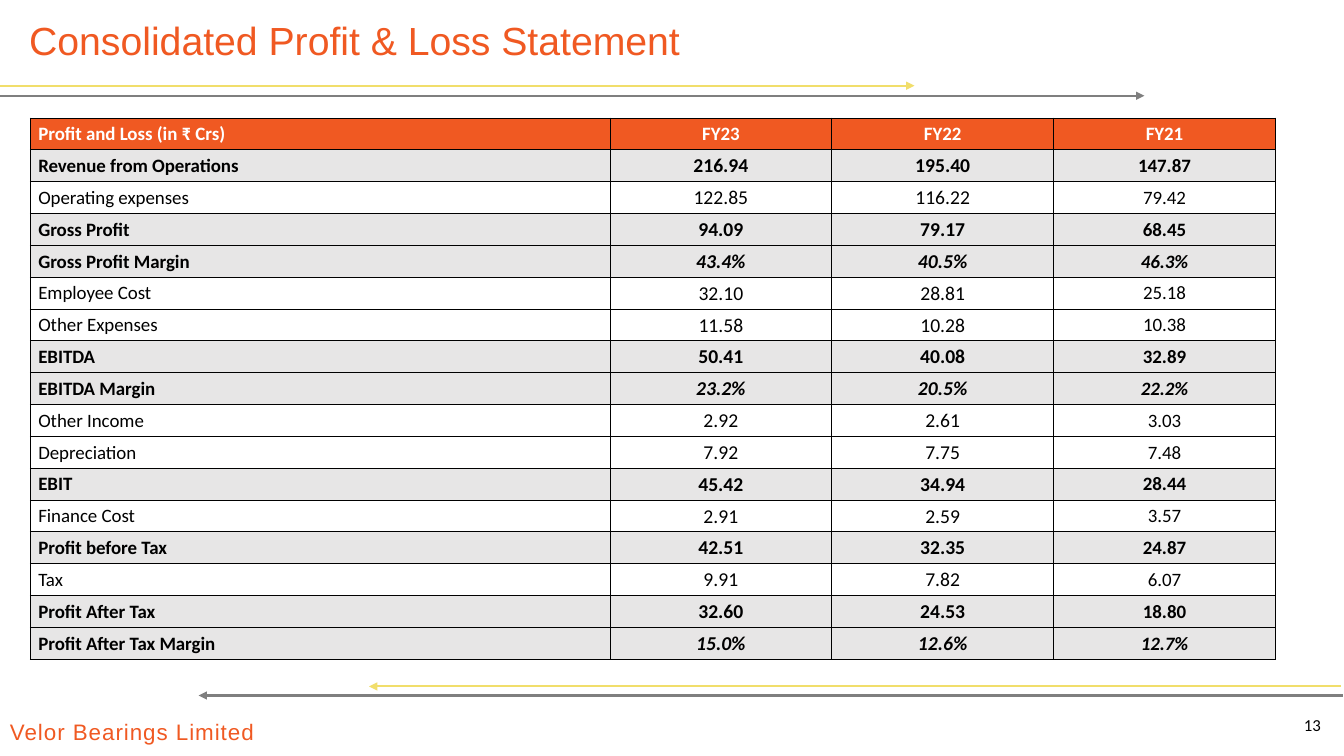
from lxml import etree
from pptx import Presentation
from pptx.dml.color import RGBColor
from pptx.enum.shapes import MSO_CONNECTOR
from pptx.enum.text import MSO_ANCHOR, PP_ALIGN
from pptx.oxml.ns import qn
from pptx.util import Inches, Pt

STRAIGHT = MSO_CONNECTOR.STRAIGHT
TOP, MIDDLE = MSO_ANCHOR.TOP, MSO_ANCHOR.MIDDLE
LEFT, CENTER, RIGHT = PP_ALIGN.LEFT, PP_ALIGN.CENTER, PP_ALIGN.RIGHT

ORANGE = RGBColor(0xF0, 0x59, 0x22)
YELLOW = RGBColor(0xF1, 0xDE, 0x6B)
GREY = RGBColor(0x7F, 0x7F, 0x7F)
PALE = RGBColor(0xE7, 0xE6, 0xE6)
BLACK = RGBColor(0, 0, 0)
WHITE = RGBColor(0xFF, 0xFF, 0xFF)

ARROWS = [
    (13.32, 1.97, 6.9, GREY),
    (13.3, 3.66, 6.81, YELLOW),
    (0, 9.07, 0.85, YELLOW),
    (0, 11.35, 0.95, GREY),
]
WIDTHS = [5.75, 2.2, 2.2, 2.2]
HEADER = ("Profit and Loss (in ₹ Crs)", "FY23", "FY22", "FY21")
RESULTS = [
    ("Revenue from Operations", "216.94", "195.40", "147.87"),
    ("Operating expenses", "122.85", "116.22", "79.42"),
    ("Gross Profit", "94.09", "79.17", "68.45"),
    ("Gross Profit Margin", "43.4%", "40.5%", "46.3%"),
    ("Employee Cost", "32.10", "28.81", "25.18"),
    ("Other Expenses", "11.58", "10.28", "10.38"),
    ("EBITDA", "50.41", "40.08", "32.89"),
    ("EBITDA Margin", "23.2%", "20.5%", "22.2%"),
    ("Other Income", "2.92", "2.61", "3.03"),
    ("Depreciation", "7.92", "7.75", "7.48"),
    ("EBIT", "45.42", "34.94", "28.44"),
    ("Finance Cost", "2.91", "2.59", "3.57"),
    ("Profit before Tax", "42.51", "32.35", "24.87"),
    ("Tax", "9.91", "7.82", "6.07"),
    ("Profit After Tax", "32.60", "24.53", "18.80"),
    ("Profit After Tax Margin", "15.0%", "12.6%", "12.7%"),
]
PLAIN = {"Operating expenses", "Employee Cost", "Other Expenses",
         "Other Income", "Depreciation", "Finance Cost", "Tax"}


def style(run, size, color, face, bold=False, italic=False):
    font = run.font
    font.size, font.name = Pt(size), face
    font.bold, font.italic = bold, italic
    font.color.rgb = color


def add_text(slide, box, text, size, color, face, align=LEFT, anchor=MIDDLE):
    frame = slide.shapes.add_textbox(*map(Inches, box)).text_frame
    frame.word_wrap = True
    frame.vertical_anchor = anchor
    frame.text = text
    line = frame.paragraphs[0]
    line.alignment = align
    style(line.runs[0], size, color, face)
    return line


def add_arrow(slide, start, end, top, color):
    arrow = slide.shapes.add_connector(
        STRAIGHT, Inches(start), Inches(top), Inches(end), Inches(top))
    arrow.line.color.rgb = color
    arrow.line.width = Pt(1.5)
    etree.SubElement(arrow.line._get_or_add_ln(), qn("a:tailEnd"), type="triangle")
    etree.SubElement(arrow._element.spPr, qn("a:effectLst"))


def add_border(cell):
    props = cell._tc.get_or_add_tcPr()
    for side in ("a:lnL", "a:lnR", "a:lnT", "a:lnB"):
        line = etree.SubElement(props, qn(side), w=str(Pt(0.5)))
        fill = etree.SubElement(line, qn("a:solidFill"))
        etree.SubElement(fill, qn("a:srgbClr"), val=str(BLACK))


def fill_cell(cell, text, first, fill, size, color, bold, italic):
    cell.margin_left = Inches(0.08 if first else 0.01)
    cell.margin_right = cell.margin_top = Inches(0.01)
    cell.margin_bottom = 0
    cell.vertical_anchor = MIDDLE
    add_border(cell)
    if fill is None:
        cell.fill.background()
    else:
        cell.fill.solid()
        cell.fill.fore_color.rgb = fill
    cell.text = text
    line = cell.text_frame.paragraphs[0]
    line.alignment = LEFT if first else CENTER
    style(line.runs[0], size, color, "Calibri", bold, italic)


def add_results(slide):
    rows = [HEADER] + RESULTS
    table = slide.shapes.add_table(
        len(rows), len(WIDTHS), Inches(0.3), Inches(1.17),
        Inches(sum(WIDTHS)), Inches(5.37)).table
    table.horz_banding = table.first_row = False
    for column, width in zip(table.columns, WIDTHS):
        column.width = Inches(width)
    for r, row in enumerate(rows):
        head = r == 0
        bold = row[0] not in PLAIN
        fill = ORANGE if head else PALE if bold else None
        color = WHITE if head else BLACK
        for c, text in enumerate(row):
            size = 14 if not head and c in (1, 2) else 13.5
            fill_cell(table.cell(r, c), text, c == 0, fill, size, color,
                      bold, text.endswith("%"))


def main():
    deck = Presentation()
    deck.slide_width, deck.slide_height = Inches(13.33), Inches(7.5)
    slide = deck.slides.add_slide(deck.slide_layouts[6])
    for arrow in ARROWS:
        add_arrow(slide, *arrow)
    brand = add_text(slide, (0, 7.08, 2.99, 0.37), "Velor Bearings Limited",
                     16, ORANGE, "Arial", anchor=TOP)
    brand.runs[0].font._element.set("spc", "70")
    title = add_text(slide, (0.19, 0.15, 8.31, 0.54),
                     "Consolidated Profit & Loss Statement", 28, ORANGE, "Arial")
    title.line_spacing = 0.9
    add_results(slide)
    add_text(slide, (12.77, 6.99, 0.43, 0.4), "13", 12, BLACK, "Calibri", RIGHT)
    deck.save("out.pptx")


if __name__ == "__main__":
    main()
